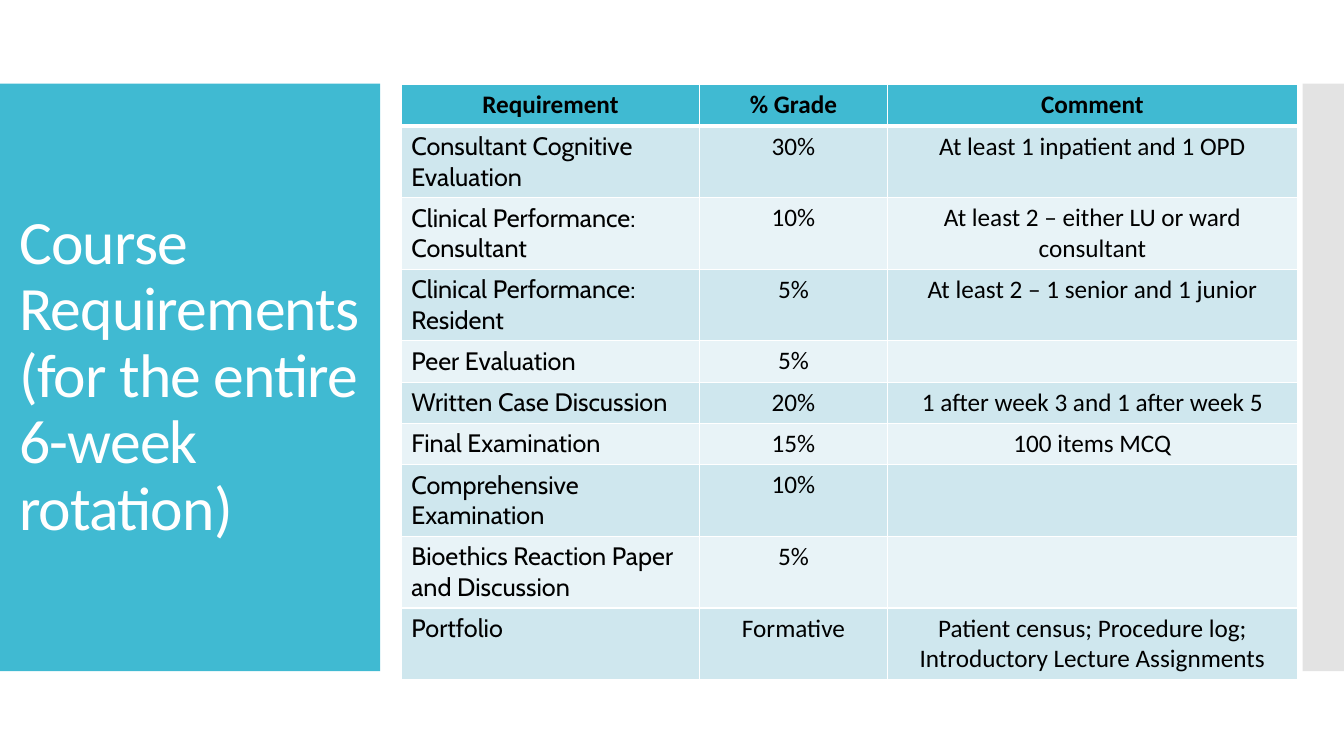
import pptx
import pptx.dml.color
import pptx.enum.shapes
import pptx.enum.text
import pptx.oxml
import pptx.oxml.ns
import pptx.util
from pptx.util import Inches

COLORS = {
    "teal": "40BAD2",
    "gray": "C8C8C8",
    "band_dark": "CFE7EE",
    "band_light": "E8F3F7",
    "white": "FFFFFF",
    "black": "000000",
}
HEADER = ("Requirement", "% Grade", "Comment")
REQUIREMENTS = [
    ("Consultant Cognitive Evaluation", "30%", "At least 1 inpatient and 1 OPD"),
    ("Clinical Performance: Consultant", "10%", "At least 2 – either LU or ward consultant"),
    ("Clinical Performance: Resident", "5%", "At least 2 – 1 senior and 1 junior"),
    ("Peer Evaluation", "5%", ""),
    ("Written Case Discussion", "20%", "1 after week 3 and 1 after week 5"),
    ("Final Examination", "15%", "100 items MCQ"),
    ("Comprehensive Examination", "10%", ""),
    ("Bioethics Reaction Paper and Discussion", "5%", ""),
    ("Portfolio", "Formative", "Patient census; Procedure log; Introductory Lecture Assignments"),
]
COLUMN_WIDTHS = (2.96, 1.86, 4.07)
ROW_HEIGHT = 0.41


def rgb(name):
    return pptx.dml.color.RGBColor.from_string(COLORS[name])


class SlideBuilder:
    """Holds the text style and the slide being built."""

    body_font = "Calibri"
    label_font = "Cabin"
    title_size = 44
    table_size = 18

    def __init__(self, slide):
        self.slide = slide

    def style(self, paragraph, size, color, font_name, alignment, bold=False):
        paragraph.alignment = alignment
        paragraph.font.name = font_name
        paragraph.font.size = pptx.util.Pt(size)
        paragraph.font.bold = bold
        paragraph.font.color.rgb = rgb(color)

    def panel(self, left, top, width, height, color, opacity=100):
        shape = self.slide.shapes.add_shape(
            pptx.enum.shapes.MSO_SHAPE.RECTANGLE,
            Inches(left), Inches(top), Inches(width), Inches(height))
        shape.shadow.inherit = False
        shape.line.fill.background()
        shape.fill.solid()
        shape.fill.fore_color.rgb = rgb(color)
        if opacity < 100:
            color_element = shape._element.spPr.find(".//" + pptx.oxml.ns.qn("a:srgbClr"))
            color_element.append(pptx.oxml.parse_xml(
                f'<a:alpha {pptx.oxml.ns.nsdecls("a")} val="{opacity * 1000}"/>'))

    def title(self, text, left, top, width, height):
        title = self.slide.shapes.title
        title.left, title.top = Inches(left), Inches(top)
        title.width, title.height = Inches(width), Inches(height)
        frame = title.text_frame
        frame.text = text
        frame.word_wrap = True
        frame.auto_size = pptx.enum.text.MSO_AUTO_SIZE.NONE
        frame.vertical_anchor = pptx.enum.text.MSO_ANCHOR.MIDDLE
        paragraph = frame.paragraphs[0]
        paragraph.line_spacing = 0.9
        self.style(paragraph, self.title_size, "white", self.body_font,
                   pptx.enum.text.PP_ALIGN.LEFT)
        # Tighter letter spacing
        paragraph.runs[0]._r.get_or_add_rPr().set("spc", "-60")
        # Bring the title in front of the panels
        self.slide.shapes._spTree.append(title._element)

    def borders(self, cell, top, bottom):
        properties = cell._tc.get_or_add_tcPr()
        for side, points in (("L", 1), ("R", 1), ("T", top), ("B", bottom)):
            properties.append(pptx.oxml.parse_xml(
                f'<a:ln{side} {pptx.oxml.ns.nsdecls("a")} w="{pptx.util.Pt(points)}">'
                f'<a:solidFill><a:srgbClr val="{COLORS["white"]}"/></a:solidFill>'
                f'</a:ln{side}>'))

    def table(self, rows, left, top, column_widths, row_height):
        table = self.slide.shapes.add_table(
            len(rows), len(column_widths), Inches(left), Inches(top),
            Inches(sum(column_widths)), Inches(row_height * len(rows))).table
        for column, width in zip(table.columns, column_widths):
            column.width = Inches(width)
        for row_index, row in enumerate(rows):
            is_header = row_index == 0
            band = "band_dark" if row_index % 2 else "band_light"
            for column_index, text in enumerate(row):
                cell = table.cell(row_index, column_index)
                is_label = column_index == 0 and not is_header
                # A thick rule separates the header from the body
                self.borders(cell, top=3 if row_index == 1 else 1,
                             bottom=3 if is_header else 1)
                cell.fill.solid()
                cell.fill.fore_color.rgb = rgb("teal" if is_header else band)
                cell.text = text
                alignment = pptx.enum.text.PP_ALIGN
                self.style(cell.text_frame.paragraphs[0], self.table_size, "black",
                           self.label_font if is_label else self.body_font,
                           alignment.LEFT if is_label else alignment.CENTER,
                           bold=is_header)


def main():
    presentation = pptx.Presentation()
    presentation.slide_width = Inches(13.33)
    presentation.slide_height = Inches(7.5)
    title_only = presentation.slide_layouts[5]
    builder = SlideBuilder(presentation.slides.add_slide(title_only))

    # Side panels
    builder.panel(0, 0.83, 3.77, 5.83, "teal")
    builder.panel(12.92, 0.83, 0.41, 5.83, "gray", opacity=50)

    # Title
    builder.title("Course Requirements (for the entire 6-week rotation)",
                  0.09, 1.23, 3.68, 5.03)

    # Requirements table
    builder.table([HEADER, *REQUIREMENTS], 3.98, 0.84, COLUMN_WIDTHS, ROW_HEIGHT)

    presentation.save("out.pptx")


if __name__ == "__main__":
    main()
